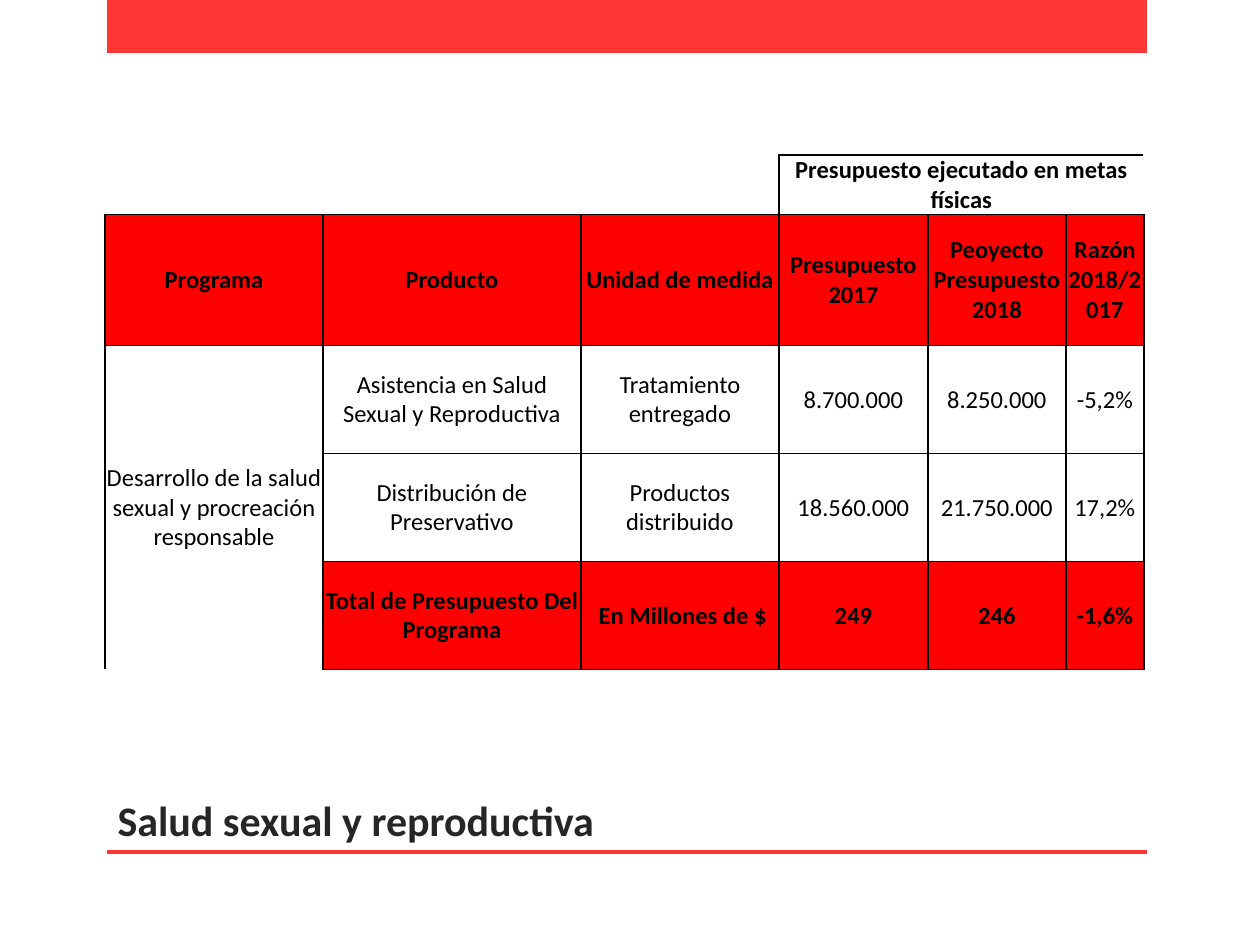
from lxml import etree
from pptx import Presentation
from pptx import util as u
from pptx.dml.color import RGBColor
from pptx.enum import shapes, text
from pptx.oxml import ns

PX = 914400 / 126
FONT = "Calibri"
BAR_RED = RGBColor(0xFD, 0x36, 0x36)
CELL_RED = RGBColor(0xFF, 0x00, 0x00)
BLACK = RGBColor(0x00, 0x00, 0x00)
TITLE_GREY = RGBColor(0x26, 0x26, 0x26)

COLUMNS = [218, 258, 198, 149, 138, 78]
ROWS = [42, 131, 108, 108, 108]
CELLS = [
    ["", "", "", "Presupuesto ejecutado en metas físicas", "", ""],
    ["Programa", "Producto", "Unidad de medida", "Presupuesto 2017",
     "Peoyecto Presupuesto 2018", "Razón 2018/2017"],
    ["Desarrollo de la salud sexual y procreación responsable",
     "Asistencia en Salud Sexual y Reproductiva", "Tratamiento entregado",
     "8.700.000", "8.250.000", "-5,2%"],
    ["", "Distribución de Preservativo", "Productos distribuido",
     "18.560.000", "21.750.000", "17,2%"],
    ["", "Total de Presupuesto Del Programa", " En Millones de $",
     "249", "246", "-1,6%"],
]
MERGES = [((0, 3), (0, 5)), ((2, 0), (4, 0))]


def px(length):
    return u.Emu(round(length * PX))


def style_runs(frame, size, color, bold):
    for para in frame.paragraphs:
        for span in para.runs:
            span.font.name = FONT
            span.font.size = u.Pt(size)
            span.font.bold = bold
            span.font.color.rgb = color


def add_bar(page, top, height):
    bar = page.shapes.add_shape(shapes.MSO_SHAPE.RECTANGLE,
                                px(107), px(top), px(1040), px(height))
    bar.shadow.inherit = False
    bar.fill.solid()
    bar.fill.fore_color.rgb = BAR_RED
    bar.line.fill.background()


def set_title(page, wording):
    title = page.shapes.title
    title.left, title.top, title.width, title.height = map(px, (105, 780, 1081, 71))
    frame = title.text_frame
    frame.text = wording
    frame.vertical_anchor = text.MSO_ANCHOR.BOTTOM
    frame.paragraphs[0].alignment = text.PP_ALIGN.LEFT
    style_runs(frame, 24, TITLE_GREY, True)


def cell_borders(row, col):
    """Return side -> width in points, leaving out edges inside a merged cell."""
    if row == 0 and col < 3:
        return {"R": 1, "B": 1} if col == 2 else {"B": 1}
    widths = dict.fromkeys("LRTB", 1)
    if col > 0 and row == 2:
        widths["B"] = 0.5
    if col > 0 and row == 3:
        widths["T"] = 0.5
    for (top, left), (bottom, right) in MERGES:
        if top <= row <= bottom and left <= col <= right:
            inner = {"L": col > left, "R": col < right,
                     "T": row > top, "B": row < bottom}
            widths = {side: w for side, w in widths.items() if not inner[side]}
    return widths


def draw_borders(cell, widths):
    properties = cell._tc.get_or_add_tcPr()
    for side, width in widths.items():
        line = etree.SubElement(properties, ns.qn(f"a:ln{side}"), w=str(u.Pt(width)))
        fill = etree.SubElement(line, ns.qn("a:solidFill"))
        etree.SubElement(fill, ns.qn("a:srgbClr"), val=str(BLACK))


def format_cell(cell, row, col):
    cell.text = CELLS[row][col]
    cell.vertical_anchor = text.MSO_ANCHOR.MIDDLE
    cell.margin_left = cell.margin_right = cell.margin_top = cell.margin_bottom = 0
    cell.text_frame.paragraphs[0].alignment = text.PP_ALIGN.CENTER
    is_total = row == 4 and col > 0
    style_runs(cell.text_frame, 14, BLACK, row < 2 or is_total)
    draw_borders(cell, cell_borders(row, col))
    if row == 1 or is_total:
        cell.fill.solid()
        cell.fill.fore_color.rgb = CELL_RED
    else:
        cell.fill.background()


def add_budget_table(page):
    frame = page.shapes.add_table(len(ROWS), len(COLUMNS), px(105), px(155),
                                  px(sum(COLUMNS)), px(sum(ROWS)))
    table = frame.table
    table.first_row = table.horz_banding = False
    for column, width in zip(table.columns, COLUMNS):
        column.width = px(width)
    for row, height in zip(table.rows, ROWS):
        row.height = px(height)
    for start, end in MERGES:
        table.cell(*start).merge(table.cell(*end))
    for row in range(len(ROWS)):
        for col in range(len(COLUMNS)):
            format_cell(table.cell(row, col), row, col)


def main():
    deck = Presentation()
    deck.slide_width, deck.slide_height = px(1260), px(945)
    page = deck.slides.add_slide(deck.slide_layouts[5])
    add_bar(page, 0, 53)
    add_bar(page, 850, 4)
    set_title(page, "Salud sexual y reproductiva")
    add_budget_table(page)
    deck.save("out.pptx")


if __name__ == "__main__":
    main()
